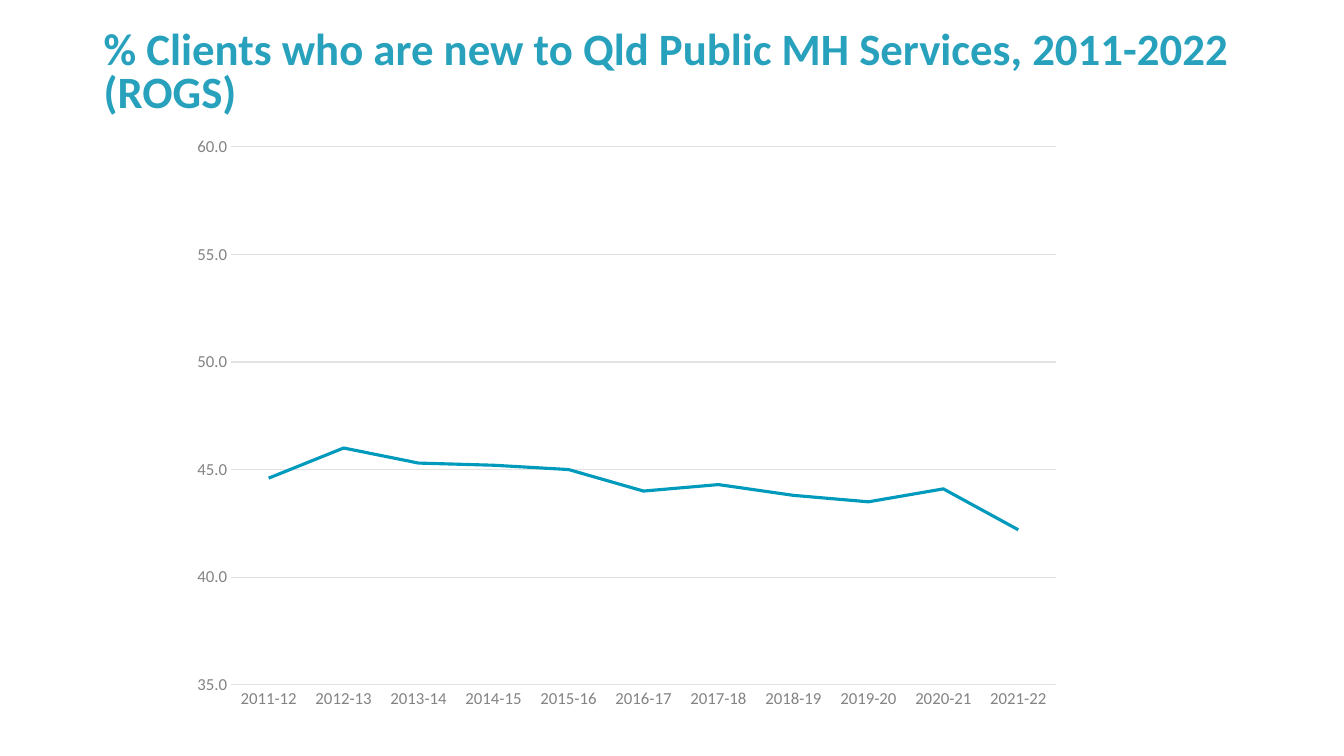
from lxml.etree import SubElement
from pptx import Presentation
from pptx.chart.data import CategoryChartData
from pptx.dml.color import RGBColor
from pptx.enum.chart import XL_CHART_TYPE, XL_TICK_MARK
from pptx.enum.text import MSO_ANCHOR
from pptx.oxml.ns import qn
from pptx.util import Inches, Pt

THEME = {
    "font": "Calibri",
    "title": RGBColor.from_string("28A1BD"),
    "trend": RGBColor.from_string("009ABC"),
    "label": RGBColor.from_string("848284"),
    "grid": RGBColor.from_string("E3E2E3"),
    "title_size": Pt(32),
    "label_size": Pt(12),
    "grid_width": Pt(0.75),
    "trend_width": Pt(2.25),
}


def style_font(font, role, bold=False):
    font.name = THEME["font"]
    font.size = THEME[role + "_size"]
    font.bold = bold
    font.color.rgb = THEME[role]


def style_line(line, role):
    line.color.rgb = THEME[role]
    line.width = THEME[role + "_width"]


deck = Presentation()
deck.slide_width, deck.slide_height = Inches(13.33), Inches(7.5)
slide = deck.slides.add_slide(deck.slide_layouts[6])

# Heading
heading = slide.shapes.add_textbox(
    Inches(0.93), Inches(0.23), Inches(11.87), Inches(1.01)).text_frame
heading.word_wrap = True
heading.vertical_anchor = MSO_ANCHOR.MIDDLE
headline = heading.paragraphs[0]
headline.line_spacing = 0.8
headline_run = headline.add_run()
headline_run.text = "% Clients who are new to Qld Public MH Services, 2011-2022 (ROGS)"
style_font(headline_run.font, "title", bold=True)

# Share of new clients per financial year
new_client_share = [44.6, 46, 45.3, 45.2, 45, 44, 44.3, 43.8, 43.5, 44.1, 42.2]
share_data = CategoryChartData()
share_data.categories = [
    f"{year}-{(year + 1) % 100}" for year in range(2011, 2011 + len(new_client_share))]
share_data.add_series("Series 1", new_client_share)
chart = slide.shapes.add_chart(
    XL_CHART_TYPE.LINE, Inches(1.76), Inches(1.22), Inches(8.89), Inches(5.93),
    share_data).chart
chart.has_legend = False
chart.has_title = False
style_font(chart.font, "label")

# Inner plot area, as shares of the chart frame
plot_area = chart.plots[0]._element.getparent()
layout = plot_area.find(qn("c:layout"))
if layout is None:
    layout = SubElement(plot_area, qn("c:layout"))
    plot_area.insert(0, layout)
manual = SubElement(layout, qn("c:manualLayout"))
plot_frame = {"layoutTarget": "inner", "xMode": "edge", "yMode": "edge",
              "x": 0.06, "y": 0.04, "w": 0.92, "h": 0.9}
for tag, setting in plot_frame.items():
    SubElement(manual, qn("c:" + tag)).set("val", str(setting))

# Axes
years, percent = chart.category_axis, chart.value_axis
for axis in (years, percent):
    axis.major_tick_mark = axis.minor_tick_mark = XL_TICK_MARK.NONE
    style_font(axis.tick_labels.font, "label")
years.has_major_gridlines = False
style_line(years.format.line, "grid")
for setting, amount in {"minimum_scale": 35, "maximum_scale": 60, "major_unit": 5,
                        "has_major_gridlines": True}.items():
    setattr(percent, setting, amount)
percent.format.line.fill.background()
style_line(percent.major_gridlines.format.line, "grid")
percent.tick_labels.number_format = r"#0.0;\-0.0;#0.0;@"
percent.tick_labels.number_format_is_linked = False

# Trend
chart.plots[0].vary_by_categories = False
trend = chart.plots[0].series[0]
trend.smooth = False
style_line(trend.format.line, "trend")

deck.save("out.pptx")
